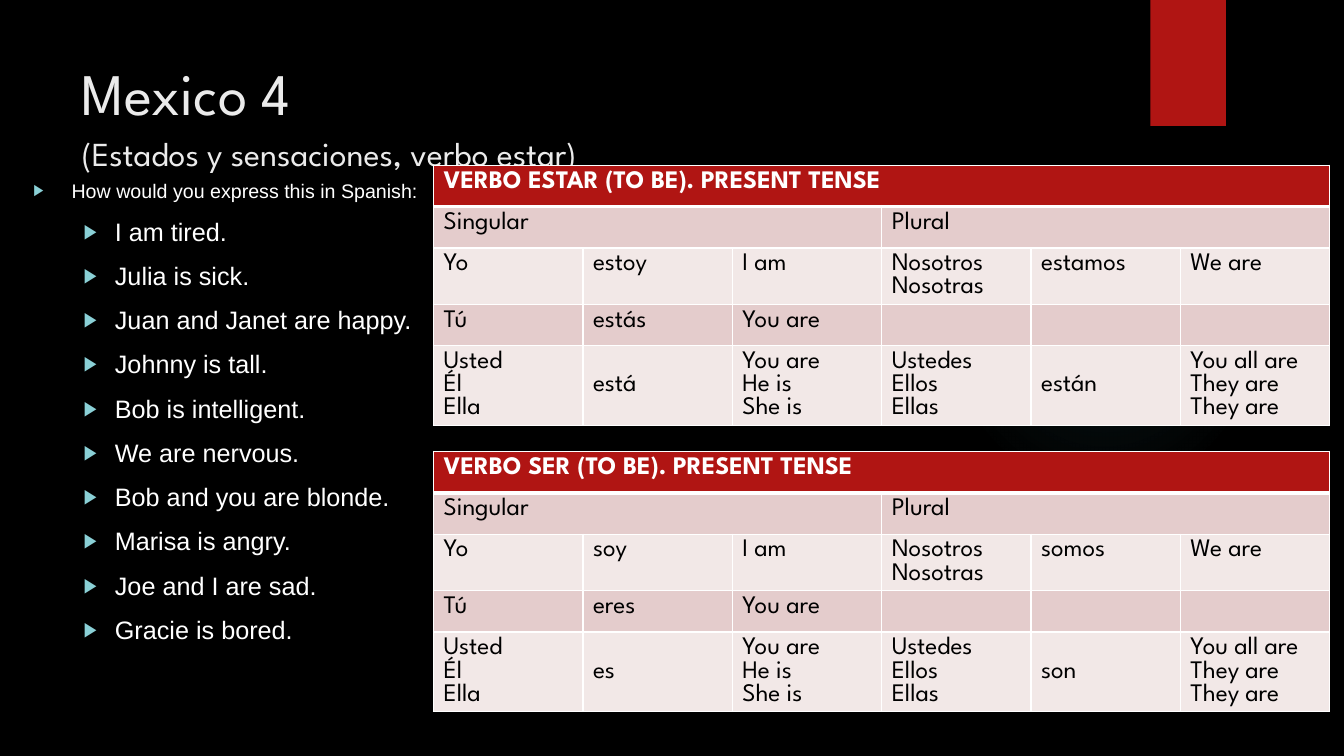
from dataclasses import dataclass

import lxml.etree
import pptx
import pptx.dml.color
import pptx.enum.shapes
import pptx.enum.text
import pptx.oxml
import pptx.oxml.ns
import pptx.util

Inches = pptx.util.Inches
Pt = pptx.util.Pt
qn = pptx.oxml.ns.qn

HEADING_FONT = "League Spartan"
BODY_FONT = "Arial"
RED, WHITE, BLACK = "B01513", "FFFFFF", "000000"
DARK_BAND, LIGHT_BAND = "E4CCCC", "F2E8E7"
ROW_HEIGHTS = (0.41, 0.41, 0.56, 0.41, 0.79)
COLUMN_WIDTH = 8.89 / 6
SENTENCES = (
    "I am tired.", "Julia is sick.", "Juan and Janet are happy.", "Johnny is tall.",
    "Bob is intelligent.", "We are nervous.", "Bob and you are blonde.",
    "Marisa is angry.", "Joe and I are sad.", "Gracie is bored.",
)


@dataclass
class Verb:
    name: str
    top: float
    yo: str
    tu: str
    usted: str
    nosotros: str
    ustedes: str

    def rows(self) -> list[list[str]]:
        return [
            [f"VERBO {self.name} (TO BE). PRESENT TENSE", "", "", "", "", ""],
            ["Singular", "", "", "Plural", "", ""],
            ["Yo", self.yo, "I am", "Nosotros\nNosotras", self.nosotros, "We are"],
            ["Tú", self.tu, "You are", "", "", ""],
            ["Usted\nÉl\nElla", self.usted, "You are\nHe is\nShe is",
             "Ustedes\nEllos\nEllas", self.ustedes, "You all are\nThey are\nThey are"],
        ]


VERBS = (
    Verb("ESTAR", 1.64, "estoy", "estás", "está", "estamos", "están"),
    Verb("SER", 4.48, "soy", "eres", "es", "somos", "son"),
)


def color(value: str) -> pptx.dml.color.RGBColor:
    return pptx.dml.color.RGBColor.from_string(value)


def set_font(font, name: str, size: float, value: str, bold: bool = False) -> None:
    font.name = name
    font.size = Pt(size)
    font.bold = bold
    font.color.rgb = color(value)


def place(shape, left: float, top: float, width: float, height: float) -> None:
    shape.left, shape.top = Inches(left), Inches(top)
    shape.width, shape.height = Inches(width), Inches(height)


def add_plain_shape(page, kind, left: float, top: float, width: float, height: float):
    shape = page.shapes.add_shape(
        kind, Inches(left), Inches(top), Inches(width), Inches(height))
    shape.shadow.inherit = False
    shape.line.fill.background()
    return shape


def add_glow(page) -> None:
    glow = add_plain_shape(
        page, pptx.enum.shapes.MSO_SHAPE.OVAL, 9.41, 1.83, 3.08, 3.08)
    stops = "".join(
        f'<a:gs pos="{position}000"><a:srgbClr val="50B9C1">'
        f'<a:alpha val="{alpha}000"/></a:srgbClr></a:gs>'
        for position, alpha in ((0, 7), (36, 6), (69, 0), (100, 0)))
    gradient = pptx.oxml.parse_xml(
        f'<a:gradFill {pptx.oxml.ns.nsdecls("a")}><a:gsLst>{stops}</a:gsLst>'
        '<a:path path="circle"><a:fillToRect l="50000" t="50000" r="50000" b="50000"/>'
        '</a:path></a:gradFill>')
    glow.element.spPr.find(qn("a:prstGeom")).addnext(gradient)


def add_bullet(para, margin: float, hanging: float) -> None:
    properties = para._p.get_or_add_pPr()
    properties.set("marL", str(Inches(margin)))
    properties.set("indent", str(-Inches(hanging)))
    bullet_color = lxml.etree.SubElement(properties, qn("a:buClr"))
    lxml.etree.SubElement(bullet_color, qn("a:srgbClr"), val="8AD0D6")
    lxml.etree.SubElement(properties, qn("a:buSzPct"), val="80000")
    lxml.etree.SubElement(properties, qn("a:buFont"), typeface=BODY_FONT)
    lxml.etree.SubElement(properties, qn("a:buChar"), char="▶")


def fill_title(title) -> None:
    place(title, 0.71, 0.5, 10.29, 1.53)
    frame = title.text_frame
    frame.word_wrap = True
    frame.auto_size = pptx.enum.text.MSO_AUTO_SIZE.NONE
    frame.vertical_anchor = pptx.enum.text.MSO_ANCHOR.MIDDLE
    para = frame.paragraphs[0]
    para.alignment = pptx.enum.text.PP_ALIGN.LEFT
    para.line_spacing = Pt(33)
    set_font(para.font, HEADING_FONT, 42, "EBEBEB")
    heading = para.add_run()
    heading.text = "Mexico 4"
    para.add_line_break()
    subtitle = para.add_run()
    subtitle.text = "(Estados y sensaciones, verbo estar)"
    subtitle.font.size = Pt(24)


def fill_exercise(body) -> None:
    place(body, 0.23, 1.72, 9.78, 4.81)
    frame = body.text_frame
    frame.word_wrap = True
    frame.auto_size = pptx.enum.text.MSO_AUTO_SIZE.NONE
    question = frame.paragraphs[0]
    question.text = "How would you express this in Spanish:"
    add_bullet(question, 0.38, 0.38)
    question.space_before = Pt(0)
    set_font(question.font, BODY_FONT, 14, WHITE)
    for sentence in SENTENCES:
        para = frame.add_paragraph()
        para.text = sentence
        para.level = 1
        add_bullet(para, 0.81, 0.31)
        para.space_before = Pt(10)
        set_font(para.font, BODY_FONT, 18, WHITE)


def set_borders(cell, top: float, bottom: float) -> None:
    properties = cell._tc.get_or_add_tcPr()
    for side, width in (("L", 1), ("R", 1), ("T", top), ("B", bottom)):
        line = lxml.etree.SubElement(properties, qn(f"a:ln{side}"), w=str(Pt(width)))
        solid = lxml.etree.SubElement(line, qn("a:solidFill"))
        lxml.etree.SubElement(solid, qn("a:srgbClr"), val=WHITE)


def add_verb_table(page, verb: Verb) -> None:
    rows = verb.rows()
    table = page.shapes.add_table(
        len(rows), 6, Inches(4.3), Inches(verb.top),
        Inches(6 * COLUMN_WIDTH), Inches(sum(ROW_HEIGHTS))).table
    for column in table.columns:
        column.width = Inches(COLUMN_WIDTH)
    for row, height in zip(table.rows, ROW_HEIGHTS):
        row.height = Inches(height)
    for r, texts in enumerate(rows):
        for c, text in enumerate(texts):
            cell = table.cell(r, c)
            set_borders(cell, 3 if r == 1 else 1, 3 if r == 0 else 1)
            cell.fill.solid()
            cell.fill.fore_color.rgb = color((RED, DARK_BAND, LIGHT_BAND)[r and 2 - r % 2])
            cell.text = text
            if r == 4:
                cell.vertical_anchor = pptx.enum.text.MSO_ANCHOR.MIDDLE
            for para in cell.text_frame.paragraphs:
                set_font(para.font, HEADING_FONT, 18, BLACK if r else WHITE, r == 0)
    # Header across the table, then one heading per number
    for r, first, last in ((0, 0, 5), (1, 0, 2), (1, 3, 5)):
        table.cell(r, first).merge(table.cell(r, last))


def main() -> None:
    deck = pptx.Presentation()
    deck.slide_width, deck.slide_height = Inches(13.33), Inches(7.5)
    page = deck.slides.add_slide(deck.slide_layouts[1])
    page.background.fill.solid()
    page.background.fill.fore_color.rgb = color(BLACK)

    # Decoration
    add_glow(page)
    ribbon = add_plain_shape(
        page, pptx.enum.shapes.MSO_SHAPE.RECTANGLE, 11.41, 0, 0.75, 1.25)
    ribbon.fill.solid()
    ribbon.fill.fore_color.rgb = color(RED)

    # Title and exercise
    fill_title(page.shapes.title)
    fill_exercise(page.placeholders[1])

    # Conjugation tables
    for verb in VERBS:
        add_verb_table(page, verb)

    deck.save("out.pptx")


if __name__ == "__main__":
    main()
